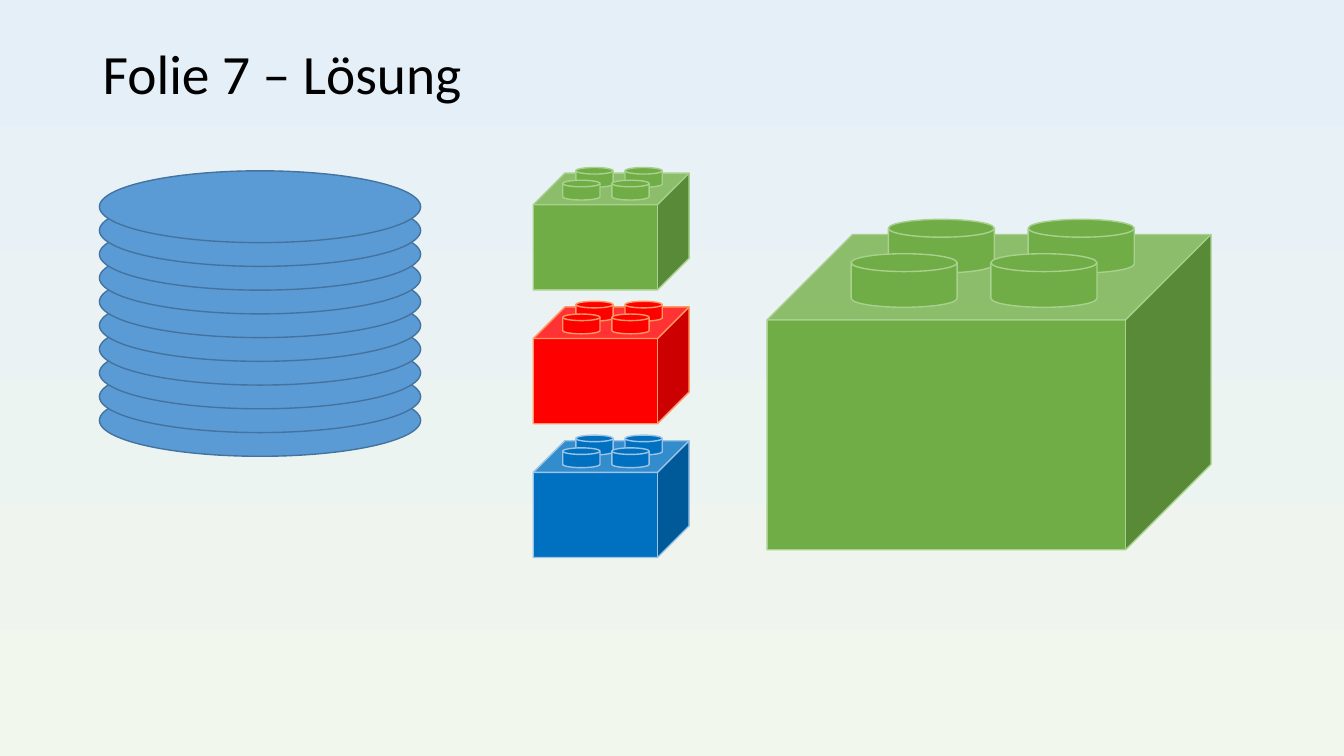
from pptx import Presentation
from pptx.dml.color import RGBColor
from pptx.enum.shapes import MSO_SHAPE as Shape
from pptx.enum.text import MSO_ANCHOR as Anchor
from pptx.util import Inches, Pt


def color(code):
    return RGBColor.from_string(code)


class Board:
    """Style and current slide; lengths are percent of the slide's size."""
    font = "Calibri"
    ink = "000000"
    stroke = 1

    def __init__(self, deck):
        self.wide, self.high = deck.slide_width, deck.slide_height
        self.slide = deck.slides.add_slide(deck.slide_layouts[6])

    def box(self, x, y, w, h):
        return [round(part * size / 100) for part, size in
                zip((x, y, w, h), (self.wide, self.high) * 2)]

    def backdrop(self, top, bottom):
        fill = self.slide.background.fill
        fill.gradient()
        fill.gradient_angle = 270
        for stop, place, code in zip(fill.gradient_stops, (0, 1), (top, bottom)):
            stop.position = place
            stop.color.rgb = color(code)

    def title(self, x, y, w, h, text, size):
        frame = self.slide.shapes.add_textbox(*self.box(x, y, w, h)).text_frame
        frame.word_wrap = True
        frame.vertical_anchor = Anchor.MIDDLE
        para = frame.paragraphs[0]
        para.line_spacing = 0.9
        run = para.add_run()
        run.text = text
        run.font.name = self.font
        run.font.size = Pt(size)
        run.font.color.rgb = color(self.ink)

    def solid(self, group, kind, x, y, w, h, fill, line):
        shape = group.shapes.add_shape(kind, *self.box(x, y, w, h))
        shape.shadow.inherit = False
        shape.fill.solid()
        shape.fill.fore_color.rgb = color(fill)
        shape.line.color.rgb = color(line)
        shape.line.width = Pt(self.stroke)
        return shape

    def stack(self, x, y, w, h, step, count, fill, line):
        group = self.slide.shapes.add_group_shape()
        for level in reversed(range(count)):
            self.solid(group, Shape.OVAL, x, y + level * step, w, h, fill, line)

    def brick(self, x, y, w, h, fill, line):
        group = self.slide.shapes.add_group_shape()
        cube = self.solid(group, Shape.CUBE, x, y, w, h, fill, line)
        cube.adjustments[0] = 0.271
        # Studs: back row first, placed as shares of the cube
        for left, top in ((0.273, -0.048), (0.189, 0.061)):
            for shift in (0, 0.315):
                self.solid(group, Shape.FLOWCHART_MAGNETIC_DISK,
                           x + (left + shift) * w, y + top * h,
                           0.239 * w, 0.17 * h, fill, line)


def main():
    deck = Presentation()
    deck.slide_width, deck.slide_height = Inches(13.333), Inches(7.5)
    board = Board(deck)
    green = ("70AD47", "A9D18E")
    red = ("FF0000", "FF9966")
    blue = ("0070C0", "9DC3E6")

    # Background and title
    board.backdrop("E5EFF8", "F1F7EC")
    board.title(6.9, 5.33, 86.25, 9.6, "Folie 7 – Lösung", 39.6)

    # Stack of discs
    board.stack(7.4, 22.6, 23.9, 9.5, 3.14, 10, "5B9BD5", "43739E")

    # Large brick
    board.brick(57.08, 31.02, 33.03, 41.7, *green)

    # Column of small bricks
    for row, tone in enumerate((green, red, blue)):
        board.brick(39.68, 22.9 + row * 17.7, 11.6, 15.45, *tone)

    deck.save("out.pptx")


if __name__ == "__main__":
    main()
